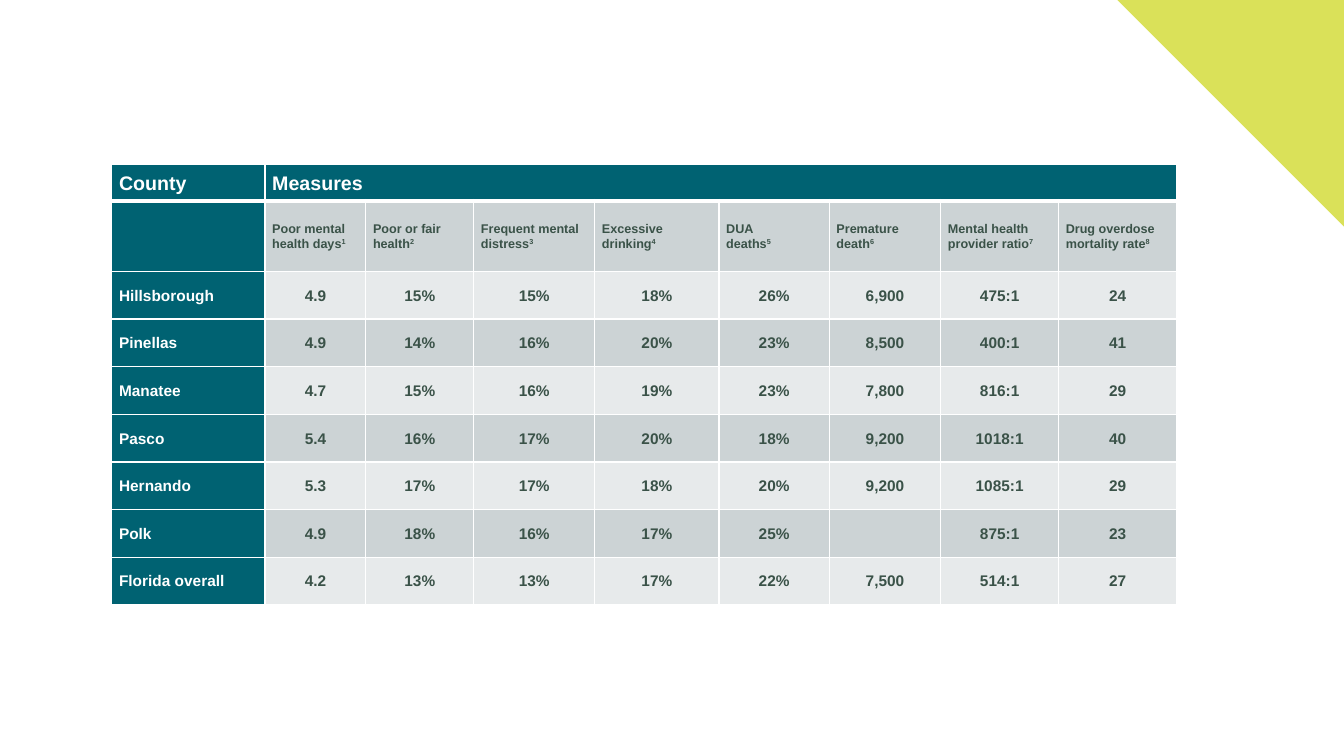
from dataclasses import dataclass

from lxml import etree
from pptx import Presentation
from pptx.dml.color import RGBColor
from pptx.enum.shapes import MSO_SHAPE
from pptx.enum.text import MSO_ANCHOR, PP_ALIGN
from pptx.oxml.ns import qn
from pptx.util import Cm, Pt

RIGHT_TRIANGLE = MSO_SHAPE.RIGHT_TRIANGLE
MIDDLE = MSO_ANCHOR.MIDDLE
LEFT, CENTER = PP_ALIGN.LEFT, PP_ALIGN.CENTER

# Content: each measure is a list of lines, numbered by its footnote mark
HEADINGS = ["County", "Measures"]
MEASURES = [
    ["Poor mental health days"],
    ["Poor or fair health"],
    ["Frequent mental distress"],
    ["Excessive drinking"],
    ["DUA", "deaths"],
    ["Premature", "death"],
    ["Mental health provider ratio"],
    ["Drug overdose mortality rate"],
]
COUNTIES = [
    ("Hillsborough", "4.9", "15%", "15%", "18%", "26%", "6,900", "475:1", "24"),
    ("Pinellas", "4.9", "14%", "16%", "20%", "23%", "8,500", "400:1", "41"),
    ("Manatee", "4.7", "15%", "16%", "19%", "23%", "7,800", "816:1", "29"),
    ("Pasco", "5.4", "16%", "17%", "20%", "18%", "9,200", "1018:1", "40"),
    ("Hernando", "5.3", "17%", "17%", "18%", "20%", "9,200", "1085:1", "29"),
    ("Polk", "4.9", "18%", "16%", "17%", "25%", "", "875:1", "23"),
    ("Florida overall", "4.2", "13%", "13%", "17%", "22%", "7,500", "514:1", "27"),
]


@dataclass(frozen=True)
class Theme:
    font: str = "Arial"
    teal: str = "006272"
    lime: str = "DAE159"
    text: str = "3A5248"
    white: str = "FFFFFF"
    bands: tuple = ("E7EAEB", "CCD3D5")
    heading_size: int = 14
    measure_size: int = 9
    body_size: int = 11
    thin_line: int = 1
    thick_line: int = 3


THEME = Theme()

# Layout in centimetres
SLIDE_WIDTH, SLIDE_HEIGHT = 33.87, 19.05
CORNER_SIZE = 5.71
TABLE_LEFT, TABLE_TOP = 2.82, 4.15
COLUMN_WIDTHS = [3.86, 2.54, 2.72, 3.05, 3.13, 2.78, 2.81, 2.97, 2.97]
ROW_HEIGHTS = [0.91, 1.78] + [1.2] * len(COUNTIES)
CELL_MARGIN = 0.18
LINE_SPACING = 1.07


def add_borders(cell, row):
    """Draw white rules, with a thick one under the top row."""
    properties = cell._tc.get_or_add_tcPr()
    thick_side = {0: "lnB", 1: "lnT"}.get(row)
    for side in ("lnL", "lnR", "lnT", "lnB"):
        width = THEME.thick_line if side == thick_side else THEME.thin_line
        line = etree.SubElement(properties, qn(f"a:{side}"), w=str(Pt(width)))
        fill = etree.SubElement(line, qn("a:solidFill"))
        etree.SubElement(fill, qn("a:srgbClr"), val=THEME.white)


def style_cell(cell, row, fill):
    add_borders(cell, row)
    cell.fill.solid()
    cell.fill.fore_color.rgb = RGBColor.from_string(fill)
    cell.vertical_anchor = MIDDLE
    cell.margin_left = cell.margin_right = Cm(CELL_MARGIN)
    cell.margin_top = cell.margin_bottom = 0


def write_cell(cell, lines, size, color, align=LEFT, mark=""):
    frame = cell.text_frame
    frame.text = "\n".join(lines)
    if mark:
        span = frame.paragraphs[-1].add_run()
        span.text = mark
        span.font._element.set("baseline", "30000")
    for para in frame.paragraphs:
        para.alignment = align
        para.line_spacing = LINE_SPACING
        para.font.name = THEME.font
        para.font.size = Pt(size)
        para.font.bold = True
        para.font.color.rgb = RGBColor.from_string(color)


def add_corner(page):
    corner = page.shapes.add_shape(
        RIGHT_TRIANGLE, Cm(SLIDE_WIDTH - CORNER_SIZE), 0, Cm(CORNER_SIZE), Cm(CORNER_SIZE)
    )
    corner.rotation = 180
    corner.shadow.inherit = False
    corner.fill.solid()
    corner.fill.fore_color.rgb = RGBColor.from_string(THEME.lime)
    corner.line.fill.background()


def add_rankings(page):
    table = page.shapes.add_table(
        len(ROW_HEIGHTS), len(COLUMN_WIDTHS), Cm(TABLE_LEFT), Cm(TABLE_TOP),
        Cm(sum(COLUMN_WIDTHS)), Cm(sum(ROW_HEIGHTS)),
    ).table
    table.first_row = table.horz_banding = False
    for column, width in zip(table.columns, COLUMN_WIDTHS):
        column.width = Cm(width)
    for table_row, height in zip(table.rows, ROW_HEIGHTS):
        table_row.height = Cm(height)

    # Fills and rules: teal top row and first column, alternating bands elsewhere
    for row in range(len(ROW_HEIGHTS)):
        for column in range(len(COLUMN_WIDTHS)):
            is_teal = row == 0 or column == 0
            style_cell(table.cell(row, column), row, THEME.teal if is_teal else THEME.bands[row % 2])

    # Top headings
    table.cell(0, 1).merge(table.cell(0, len(MEASURES)))
    for column, heading in enumerate(HEADINGS):
        write_cell(table.cell(0, column), [heading], THEME.heading_size, THEME.white)

    # Measure names with footnote marks
    write_cell(table.cell(1, 0), [""], THEME.measure_size, THEME.white)
    for number, lines in enumerate(MEASURES, start=1):
        write_cell(table.cell(1, number), lines, THEME.measure_size, THEME.text, mark=str(number))

    # County rows
    for row, (county, *values) in enumerate(COUNTIES, start=2):
        write_cell(table.cell(row, 0), [county], THEME.body_size, THEME.white)
        for column, value in enumerate(values, start=1):
            write_cell(table.cell(row, column), [value], THEME.body_size, THEME.text, CENTER)


def main():
    deck = Presentation()
    deck.slide_width, deck.slide_height = Cm(SLIDE_WIDTH), Cm(SLIDE_HEIGHT)
    page = deck.slides.add_slide(deck.slide_layouts[6])
    add_corner(page)
    add_rankings(page)
    deck.save("out.pptx")


if __name__ == "__main__":
    main()
